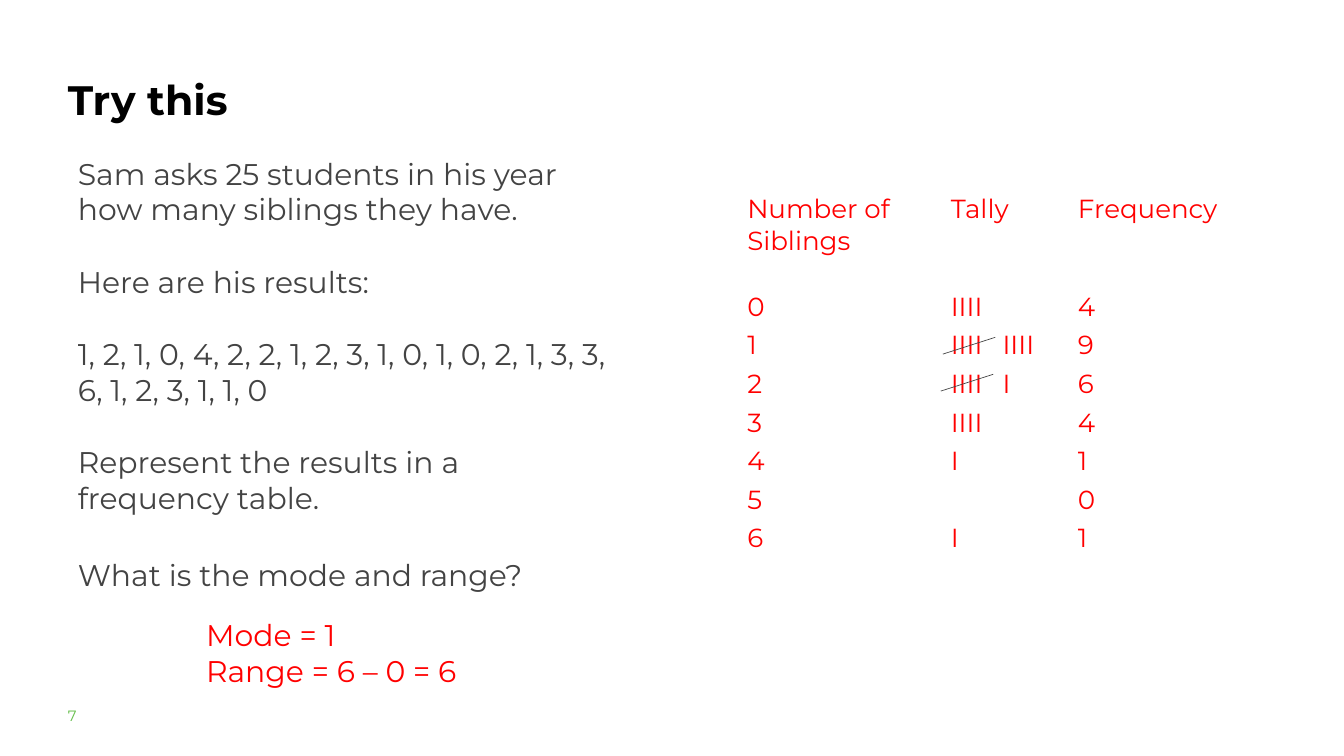
from lxml import etree
from pptx import Presentation
from pptx import util as u
from pptx.dml import color
from pptx.enum import shapes, text
from pptx.oxml import ns

PX = 9144
FONT = "Montserrat"
BLACK, GREY, RED, GREEN = "000000", "434343", "FF0000", "65BE4B"
TALLY_TAB = 77

QUESTION = [
    "Sam asks 25 students in his year how many siblings they have.",
    "Here are his results:",
    "1, 2, 1, 0, 4, 2, 2, 1, 2, 3, 1, 0, 1, 0, 2, 1, 3, 3, 6, 1, 2, 3, 1, 1, 0",
    "Represent the results in a frequency table.",
]
FREQUENCIES = [
    ("Number of Siblings", "Tally", "Frequency"),
    ("0", "IIII", "4"),
    ("1", "IIII\tIIII", "9"),
    ("2", "IIII\tI", "6"),
    ("3", "IIII", "4"),
    ("4", "I", "1"),
    ("5", "", "0"),
    ("6", "I", "1"),
]


def px(*lengths):
    return [u.Emu(length * PX) for length in lengths]


def rgb(code):
    return color.RGBColor.from_string(code)


def set_all(target, **values):
    for name, value in values.items():
        setattr(target, name, value)


def style(paragraph, size, colour, bold=False):
    set_all(paragraph.font, name=FONT, size=u.Pt(size), bold=bold)
    paragraph.font.color.rgb = rgb(colour)


def write(frame, lines, size, colour, bold=False, gap=0, spacing=1.0):
    set_all(frame, word_wrap=True, auto_size=text.MSO_AUTO_SIZE.NONE,
            vertical_anchor=text.MSO_ANCHOR.TOP)
    for index, line in enumerate(lines):
        paragraph = frame.paragraphs[0] if index == 0 else frame.add_paragraph()
        set_all(paragraph, text=line, alignment=text.PP_ALIGN.LEFT,
                line_spacing=spacing, space_before=u.Pt(gap if index else 0))
        style(paragraph, size, colour, bold)


def add_title(slide, box, words):
    title = slide.shapes.title
    set_all(title, **dict(zip(("left", "top", "width", "height"), px(*box))))
    write(title.text_frame, [words], 44, BLACK, bold=True, spacing=1.3)


def add_text(slide, box, lines, size, colour, **layout):
    frame = slide.shapes.add_textbox(*px(*box)).text_frame
    write(frame, lines, size, colour, **layout)


def add_tab(paragraph, position):
    tabs = etree.SubElement(paragraph._p.get_or_add_pPr(), ns.qn("a:tabLst"))
    etree.SubElement(tabs, ns.qn("a:tab"), pos=str(position * PX), algn="l")


def add_frequency_table(slide, left, top, widths, heights):
    box = px(left, top, sum(widths), sum(heights))
    table = slide.shapes.add_table(len(heights), len(widths), *box).table
    set_all(table, first_row=False, horz_banding=False)
    for column, width in zip(table.columns, px(*widths)):
        column.width = width
    for row, height, words in zip(table.rows, px(*heights), FREQUENCIES):
        row.height = height
        for cell, word in zip(row.cells, words):
            cell.fill.background()
            cell.text = word
            paragraph = cell.text_frame.paragraphs[0]
            if "\t" in word:
                add_tab(paragraph, TALLY_TAB)
            style(paragraph, 28, RED)


def add_tally_stroke(slide, left, bottom):
    ends = px(left, bottom, left + 78, bottom - 25)
    stroke = slide.shapes.add_connector(shapes.MSO_CONNECTOR.STRAIGHT, *ends)
    stroke.line.width = u.Pt(0.75)
    stroke.line.color.rgb = rgb(GREY)
    etree.SubElement(stroke._element.spPr, ns.qn("a:effectLst"))


def main():
    deck = Presentation()
    deck.slide_width, deck.slide_height = px(2000, 1125)
    slide = deck.slides.add_slide(deck.slide_layouts[5])

    add_title(slide, (91, 84, 396, 98), "Try this")
    add_text(slide, (91, 1038, 89, 42), ["7"], 16, GREEN, spacing=1.3)
    add_text(slide, (106, 226, 819, 562), QUESTION, 32, GREY, gap=39)
    add_frequency_table(slide, 1102, 282, [303, 189, 253], [146] + [55] * 7)
    add_text(slide, (106, 824, 926, 64), ["What is the mode and range?"], 32, GREY)
    for left, bottom in ((1403, 527), (1400, 582)):
        add_tally_stroke(slide, left, bottom)
    add_text(slide, (297, 913, 513, 118), ["Mode = 1", "Range = 6 – 0 = 6"], 32, RED)

    deck.save("out.pptx")


if __name__ == "__main__":
    main()
